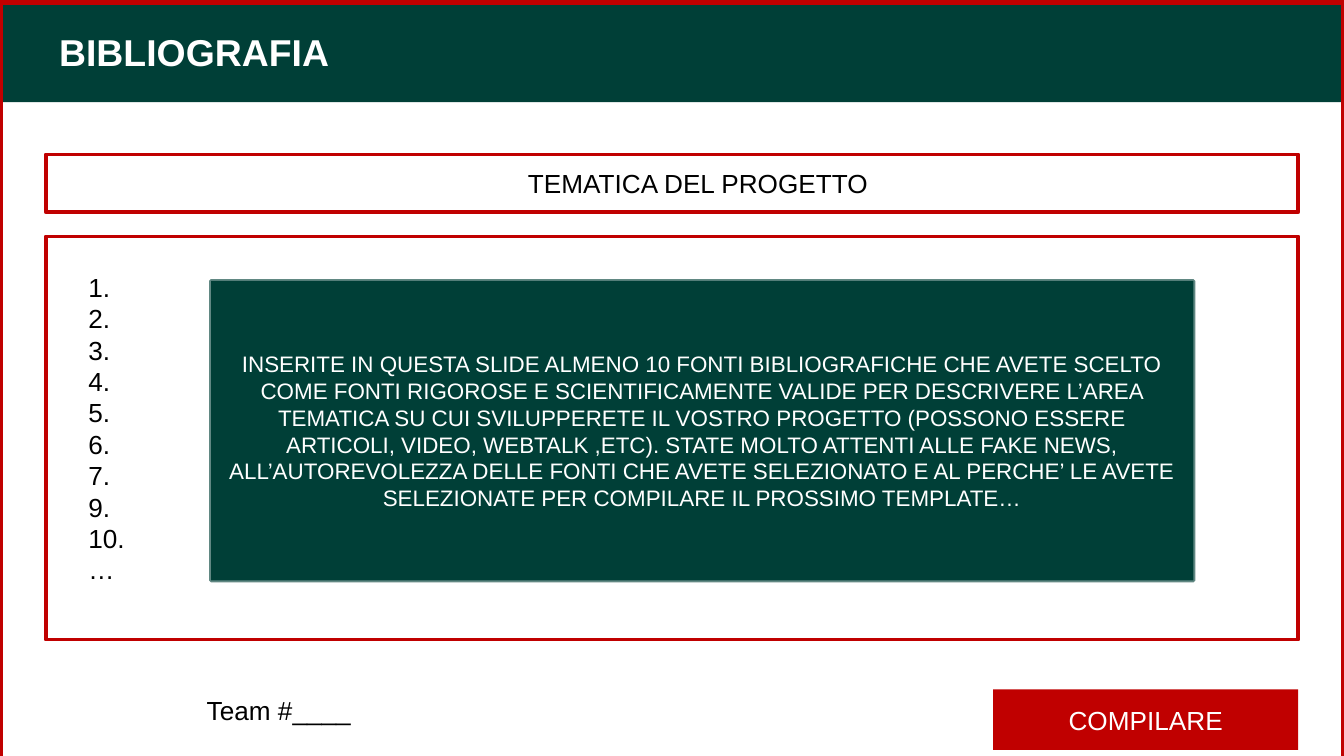
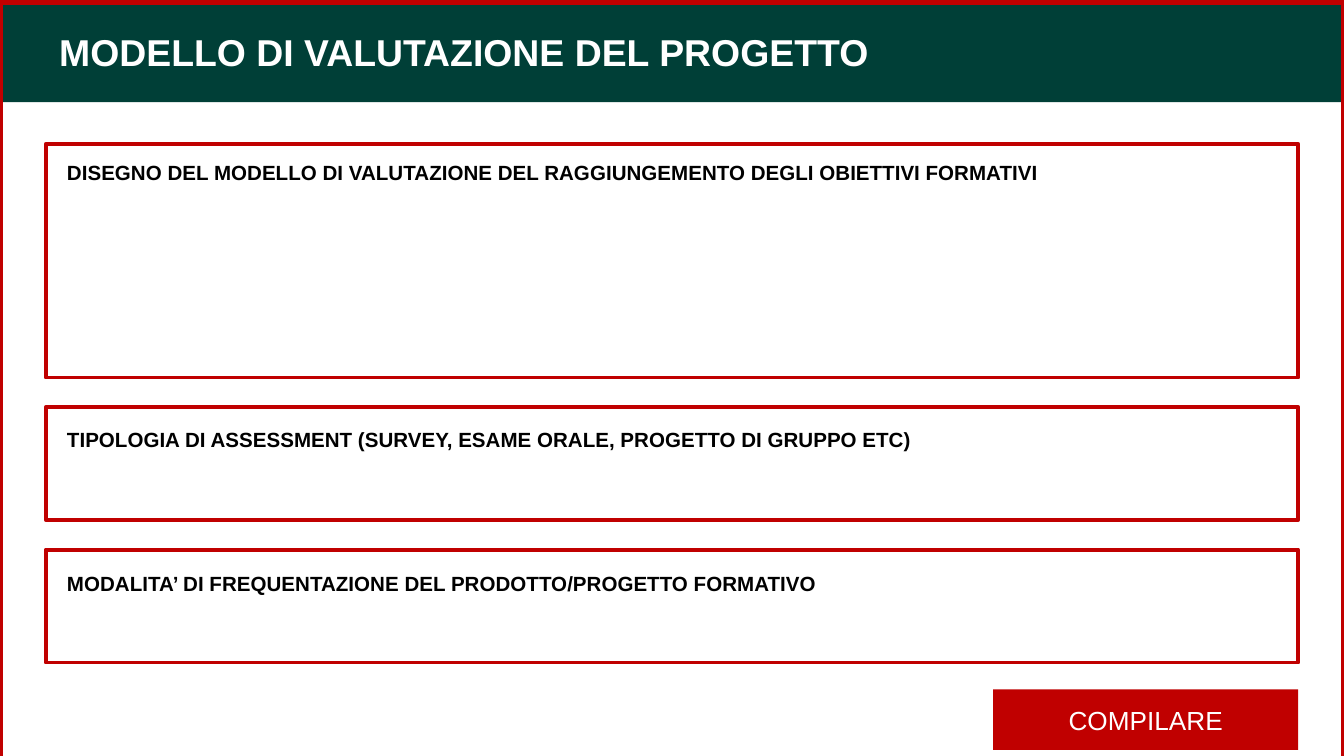
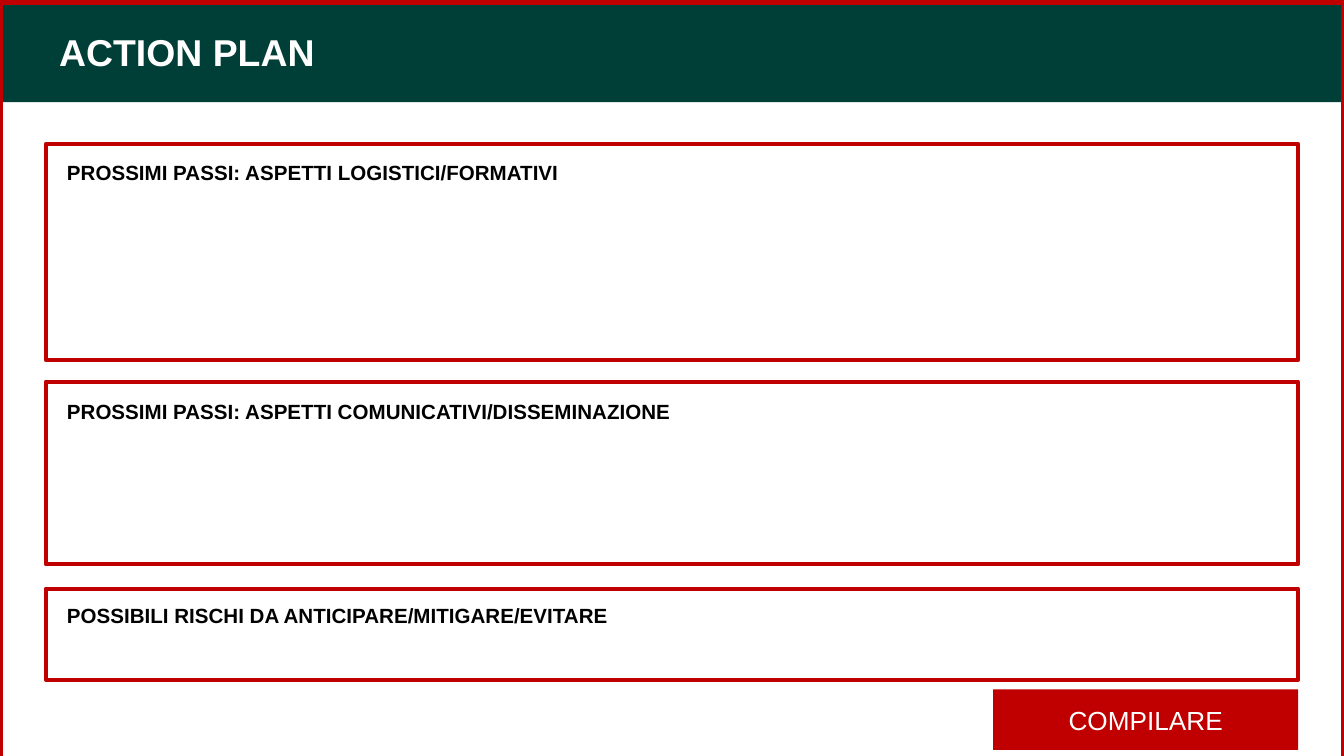
from dataclasses import dataclass

import lxml.etree
import pptx
import pptx.dml.color
import pptx.enum.shapes
import pptx.enum.text
import pptx.oxml.ns
import pptx.util
from pptx.util import Inches

GREEN, RED, WHITE, BLACK = "003F37", "C00000", "FFFFFF", "000000"
FONT = "Arial"
PAGE_WIDTH = 10
PAGE_HEIGHT = PAGE_WIDTH * 9 / 16
MARGIN, CONTENT_WIDTH = 0.34, 9.32
LABEL_LEFT, LABEL_HEIGHT = 0.4, 0.29
TITLE_ONLY_LAYOUT = 5

LEFT = pptx.enum.text.PP_ALIGN.LEFT
CENTER = pptx.enum.text.PP_ALIGN.CENTER
TOP = pptx.enum.text.MSO_ANCHOR.TOP
MIDDLE = pptx.enum.text.MSO_ANCHOR.MIDDLE


@dataclass(frozen=True)
class Area:
    left: float
    top: float
    width: float
    height: float

    def lengths(self) -> list[int]:
        return [Inches(side) for side in (self.left, self.top, self.width, self.height)]


@dataclass(frozen=True)
class TextStyle:
    size: int
    color: str = BLACK
    bold: bool = False
    align: int = LEFT
    anchor: int = TOP
    inset: float = 0.05
    wrap: bool = True


@dataclass(frozen=True)
class Section:
    """A red outlined panel with a heading near its top edge."""
    top: float
    height: float
    label_top: float
    label_width: float
    label: str


TITLE = TextStyle(20, WHITE, bold=True, anchor=MIDDLE, inset=0.1)
LABEL = TextStyle(11, bold=True, wrap=False)
PLAIN = TextStyle(14, wrap=False)
TEAM = TextStyle(14, anchor=MIDDLE)
BUTTON = TextStyle(14, WHITE, align=CENTER, anchor=MIDDLE)
INSTRUCTIONS = TextStyle(12, WHITE, align=CENTER, anchor=MIDDLE)

REFERENCE_MARKS = ["1.", "2.", "3.", "4.", "5.", "6.", "7.", "9.", "10.", "…"]
INSTRUCTION_TEXT = (
    "INSERITE IN QUESTA SLIDE ALMENO 10 FONTI BIBLIOGRAFICHE CHE AVETE SCELTO "
    "COME FONTI RIGOROSE E SCIENTIFICAMENTE VALIDE PER DESCRIVERE L’AREA "
    "TEMATICA SU CUI SVILUPPERETE IL VOSTRO PROGETTO (POSSONO ESSERE "
    "ARTICOLI, VIDEO, WEBTALK ,ETC). STATE MOLTO ATTENTI ALLE FAKE NEWS, "
    "ALL’AUTOREVOLEZZA DELLE FONTI CHE AVETE SELEZIONATO E AL PERCHE’ LE AVETE "
    "SELEZIONATE PER COMPILARE IL PROSSIMO TEMPLATE…"
)
EVALUATION_SECTIONS = [
    Section(1.07, 1.74, 1.14, 7.48,
            "DISEGNO DEL MODELLO DI VALUTAZIONE DEL RAGGIUNGEMENTO DEGLI OBIETTIVI FORMATIVI"),
    Section(3.03, 0.84, 3.13, 6.51,
            "TIPOLOGIA DI ASSESSMENT (SURVEY, ESAME ORALE, PROGETTO DI GRUPPO ETC)"),
    Section(4.09, 0.84, 4.2, 5.88,
            "MODALITA’ DI FREQUENTAZIONE DEL PRODOTTO/PROGETTO FORMATIVO"),
]
ACTION_SECTIONS = [
    Section(1.07, 1.61, 1.14, 3.91, "PROSSIMI PASSI: ASPETTI LOGISTICI/FORMATIVI"),
    Section(2.84, 1.36, 2.92, 4.76, "PROSSIMI PASSI: ASPETTI COMUNICATIVI/DISSEMINAZIONE"),
    Section(4.38, 0.68, 4.44, 4.3, "POSSIBILI RISCHI DA ANTICIPARE/MITIGARE/EVITARE"),
]


def rgb(color: str) -> pptx.dml.color.RGBColor:
    return pptx.dml.color.RGBColor.from_string(color)


def write(box, lines: list[str], style: TextStyle) -> None:
    frame = box.text_frame
    frame.word_wrap = style.wrap
    frame.auto_size = pptx.enum.text.MSO_AUTO_SIZE.NONE
    frame.vertical_anchor = style.anchor
    frame.margin_left = frame.margin_right = Inches(0.1)
    frame.margin_top = frame.margin_bottom = Inches(style.inset)
    for index, line in enumerate(lines):
        para = frame.add_paragraph() if index else frame.paragraphs[0]
        para.alignment = style.align
        span = para.add_run()
        span.text = line
        span.font.name = FONT
        span.font.size = pptx.util.Pt(style.size)
        span.font.bold = style.bold
        span.font.color.rgb = rgb(style.color)


def add_text(page, area: Area, lines: list[str], style: TextStyle) -> None:
    write(page.shapes.add_textbox(*area.lengths()), lines, style)


def add_box(page, area: Area, fill: str = "", line: str = "", line_width: float = 2):
    box = page.shapes.add_shape(pptx.enum.shapes.MSO_SHAPE.RECTANGLE, *area.lengths())
    box.shadow.inherit = False
    if fill:
        box.fill.solid()
        box.fill.fore_color.rgb = rgb(fill)
    else:
        box.fill.background()
    if line:
        box.line.color.rgb = rgb(line)
        box.line.width = pptx.util.Pt(line_width)
    else:
        box.line.fill.background()
    return box


def set_line_opacity(box, percent: int) -> None:
    qualified = pptx.oxml.ns.qn
    color = box.element.spPr.find(qualified("a:ln")).find(".//" + qualified("a:srgbClr"))
    lxml.etree.SubElement(color, qualified("a:alpha")).set("val", str(percent * 1000))


def add_panel(page, top: float, height: float) -> None:
    add_box(page, Area(MARGIN, top, CONTENT_WIDTH, height), line=RED)


def add_page(deck, heading: str):
    """Add a slide with the green title band and the red page frame."""
    page = deck.slides.add_slide(deck.slide_layouts[TITLE_ONLY_LAYOUT])
    title = page.shapes.title
    title.left, title.top, title.width, title.height = Area(
        MARGIN, 0.07, CONTENT_WIDTH, 0.63).lengths()
    write(title, [heading], TITLE)
    band = add_box(page, Area(0, 0, PAGE_WIDTH, 0.76), fill=GREEN)
    title.element.addprevious(band.element)
    add_box(page, Area(0, 0.02, PAGE_WIDTH, PAGE_HEIGHT), line=RED, line_width=3)
    return page


def add_button(page) -> None:
    write(add_box(page, Area(7.39, 5.13, 2.27, 0.45), fill=RED), ["COMPILARE"], BUTTON)


def add_bibliography_page(deck) -> None:
    page = add_page(deck, "BIBLIOGRAFIA")
    add_panel(page, 1.15, 0.43)
    add_text(page, Area(3.83, 1.2, 2.79, 0.34), ["TEMATICA DEL PROGETTO"], PLAIN)
    add_panel(page, 1.76, 3)
    add_text(page, Area(0.56, 1.97, 0.47, 2.46), REFERENCE_MARKS, PLAIN)
    instructions = add_box(page, Area(1.57, 2.09, 7.31, 2.23), fill=GREEN, line=GREEN)
    set_line_opacity(instructions, 62)
    write(instructions, [INSTRUCTION_TEXT], INSTRUCTIONS)
    add_button(page)
    add_text(page, Area(1.44, 5.06, 2.27, 0.45), ["Team #____"], TEAM)


def add_sections_page(deck, heading: str, sections: list[Section]) -> None:
    page = add_page(deck, heading)
    for section in sections:
        add_panel(page, section.top, section.height)
        area = Area(LABEL_LEFT, section.label_top, section.label_width, LABEL_HEIGHT)
        add_text(page, area, [section.label], LABEL)
    add_button(page)


def main() -> None:
    deck = pptx.Presentation()
    deck.slide_width, deck.slide_height = Inches(PAGE_WIDTH), Inches(PAGE_HEIGHT)
    add_bibliography_page(deck)
    add_sections_page(deck, "MODELLO DI VALUTAZIONE DEL PROGETTO", EVALUATION_SECTIONS)
    add_sections_page(deck, "ACTION PLAN", ACTION_SECTIONS)
    deck.save("out.pptx")


if __name__ == "__main__":
    main()
